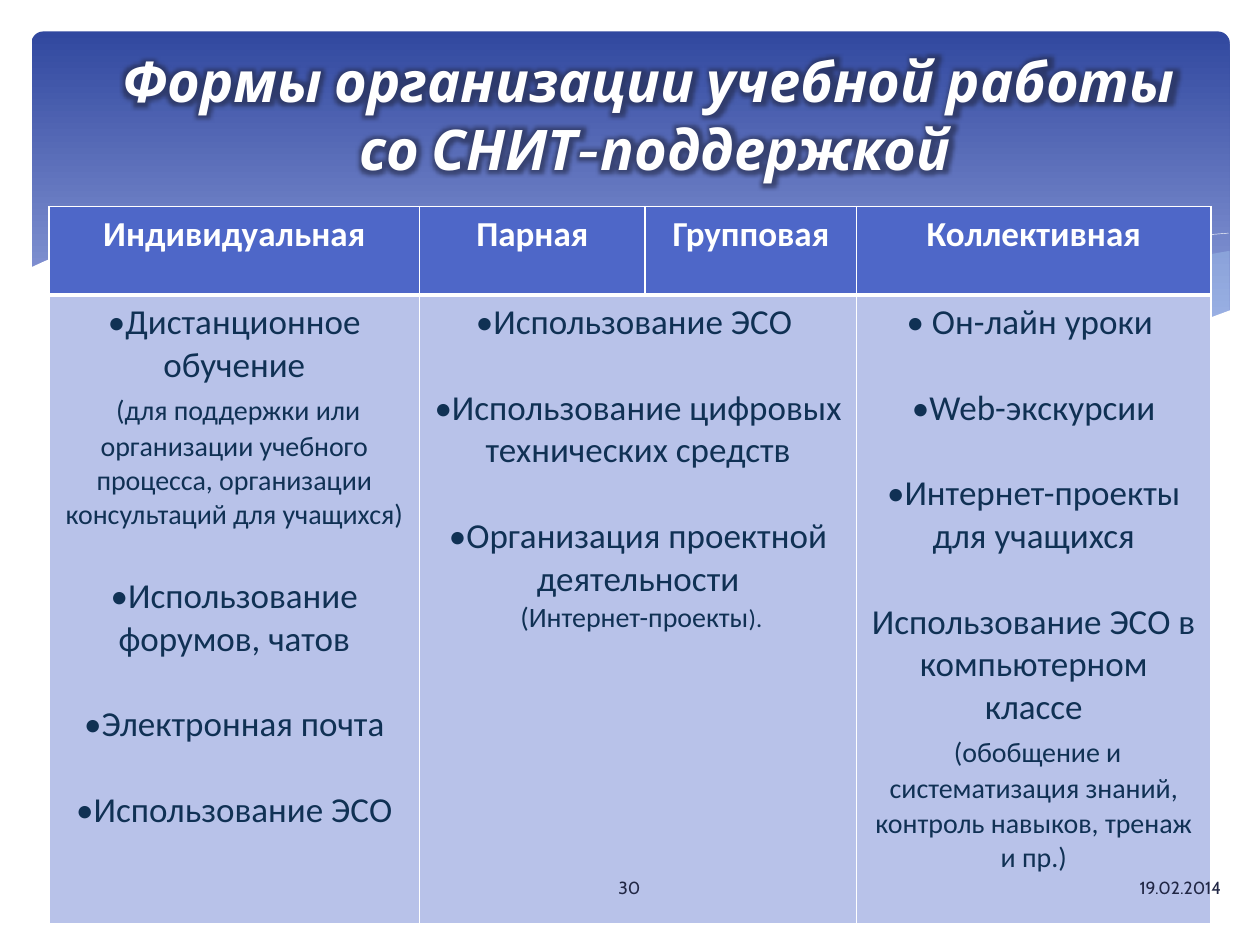
from dataclasses import dataclass
from typing import NamedTuple

from lxml.etree import SubElement
from pptx import Presentation
from pptx.dml.color import RGBColor as RGB
from pptx.enum.shapes import MSO_SHAPE as SHAPE
from pptx.enum.text import MSO_ANCHOR as ANCHOR, MSO_AUTO_SIZE as AUTO, PP_ALIGN as ALIGN
from pptx.oxml import parse_xml
from pptx.oxml.ns import nsdecls, qn
from pptx.util import Inches, Pt


@dataclass(frozen=True)
class Theme:
    white: str = "FFFFFF"
    band_top: str = "31489F"
    band_bottom: str = "95A4DE"
    wave: str = "B4DCFA"
    header: str = "4E67C8"
    body: str = "B8C2E9"
    ink: str = "103154"
    footer: str = "212745"
    title_font: str = "Cabin"
    table_font: str = "Calibri"
    title_pt: int = 32
    text_pt: int = 20
    note_pt: int = 16
    small_pt: int = 14
    footer_pt: int = 10
    gap_pt: float = 24.4


class Wave(NamedTuple):
    points: list[tuple[float, float]]
    fill: str | None = None
    alpha: int = 100


class Para(NamedTuple):
    runs: list[tuple[str, int]]
    bullet: bool = False
    gap: bool = False


class Footer(NamedTuple):
    text: str
    left: float
    width: float
    align: ALIGN


T = Theme()


def item(text: str, gap: bool = True, bullet: bool = True) -> Para:
    return Para([(text, T.text_pt)], bullet, gap)


def note(text: str) -> Para:
    return Para([(" ", T.text_pt), (text, T.note_pt)])


WAVES = [
    Wave([(9.76, 1.99), (9.48, 2.04), (9.06, 2.13), (8.61, 2.23), (8.05, 2.37), (7.53, 2.48),
          (7.06, 2.57), (6.61, 2.65), (7.05, 2.71), (7.57, 2.76), (8.03, 2.78), (8.54, 2.76),
          (8.97, 2.7), (9.35, 2.61), (9.76, 2.47)], T.wave, 29),
    Wave([(8.93, 2.73), (8.37, 2.65), (7.75, 2.54), (7.06, 2.4), (6.29, 2.22), (5.69, 2.08),
          (5.14, 1.98), (4.65, 1.91), (4.2, 1.87), (3.61, 1.86), (3.13, 1.88), (2.86, 1.91),
          (3.42, 1.99), (4.04, 2.11), (4.91, 2.32), (5.66, 2.48), (6.34, 2.61), (6.95, 2.7),
          (7.48, 2.76), (8.07, 2.78), (8.57, 2.77)], T.wave, 40),
    Wave([(3.09, 1.95), (3.44, 1.9), (4.01, 1.87), (4.69, 1.89), (5.33, 1.94), (6.08, 2.04),
          (6.95, 2.19), (7.95, 2.41), (9.07, 2.72)]),
    Wave([(6.13, 2.57), (6.72, 2.41), (7.48, 2.23), (8.36, 2.04), (8.95, 1.94), (9.38, 1.88),
          (9.75, 1.85)]),
    Wave([(9.77, 2.46), (9.5, 2.56), (9.2, 2.65), (8.87, 2.71), (8.5, 2.75), (8.09, 2.77),
          (7.61, 2.75), (7.08, 2.7), (6.47, 2.62), (5.79, 2.5), (5.03, 2.33), (4.47, 2.2),
          (3.91, 2.07), (3.39, 1.97), (2.92, 1.91), (2.5, 1.86), (1.93, 1.84), (1.46, 1.85),
          (1.06, 1.89), (0.75, 1.95), (0.52, 2.01), (0.36, 2.07), (0.23, 2.13), (0.23, 3.29),
          (9.77, 3.29)], T.white),
]
HEADERS = ["Индивидуальная", "Парная", "Групповая", "Коллективная"]
COL_WIDTHS = [2.94, 1.79, 1.68, 2.81]
ROW_HEIGHTS = [0.7, 4.99]
# Column index -> cell text; column 1 spans the pair and group columns
BODY = {
    0: [item("Дистанционное обучение", gap=False),
        note("(для поддержки или организации учебного процесса, "
             "организации консультаций для учащихся)"),
        item("Использование форумов, чатов"),
        item("Электронная почта"),
        item("Использование ЭСО")],
    1: [item("Использование ЭСО ", gap=False),
        item("Использование цифровых технических средств"),
        item("Организация проектной деятельности"),
        Para([(" (Интернет-проекты", T.note_pt), (").", T.small_pt)])],
    3: [item(" Он-лайн уроки ", gap=False),
        item("Web-экскурсии"),
        item("Интернет-проекты для учащихся"),
        item("Использование ЭСО в компьютерном классе", bullet=False),
        note("(обобщение и систематизация знаний, контроль навыков, тренаж и пр.)")],
}
FOOTERS = [Footer("19.02.2014", 5.65, 4.14, ALIGN.RIGHT),
           Footer("30", 4.36, 1.27, ALIGN.CENTER)]


def style(r, font: str, size: int, color: str, bold: bool = False) -> None:
    r.font.name, r.font.size, r.font.bold = font, Pt(size), bold
    r.font.color.rgb = RGB.from_string(color)


def draw_band(slide) -> None:
    sp = slide.shapes.add_shape(SHAPE.ROUNDED_RECTANGLE, Inches(0.25), Inches(0.25),
                                Inches(9.51), Inches(2.7))
    sp.adjustments[0] = 0.034
    sp.shadow.inherit = False
    sp.line.fill.background()
    sp.fill.gradient()
    sp.fill.gradient_angle = 270
    for stop, color, pos in zip(sp.fill.gradient_stops, (T.band_top, T.band_bottom), (0, 0.9)):
        stop.color.rgb, stop.position = RGB.from_string(color), pos


def draw_wave(slide, wave: Wave) -> None:
    # Freeform points are whole numbers, so they are given in hundredths of an inch
    start, *rest = [(round(x * 100), round(y * 100)) for x, y in wave.points]
    fb = slide.shapes.build_freeform(*start, scale=Inches(0.01))
    fb.add_line_segments(rest, close=wave.fill is not None)
    sp = fb.convert_to_shape()
    sp.shadow.inherit = False
    if wave.fill is None:
        sp.fill.background()
        sp.line.color.rgb, sp.line.width = RGB.from_string(T.white), Pt(0.25)
        return
    sp.line.fill.background()
    sp.fill.solid()
    sp.fill.fore_color.rgb = RGB.from_string(wave.fill)
    if wave.alpha < 100:
        clr = sp.fill._xPr.find(".//" + qn("a:srgbClr"))
        SubElement(clr, qn("a:alpha")).set("val", str(wave.alpha * 1000))


def write_title(slide) -> None:
    sp = slide.shapes.title
    slide.shapes._spTree.append(sp._element)  # in front of the background
    sp.left, sp.top, sp.width, sp.height = map(Inches, (0.5, 0.28, 9.34, 1.25))
    tf = sp.text_frame
    tf.text = "Формы организации учебной работы \vсо СНИТ-поддержкой"
    tf.auto_size, tf.vertical_anchor = AUTO.NONE, ANCHOR.MIDDLE
    p = tf.paragraphs[0]
    p.alignment = ALIGN.CENTER
    p._p.get_or_add_pPr().set("marL", str(Inches(0.06)))
    for r in p.runs:
        style(r, T.title_font, T.title_pt, T.white, bold=True)
        r.font.italic = True
        # Soft dark halo behind the letters
        r.font.fill._xPr.find(qn("a:solidFill")).addnext(parse_xml(
            f'<a:effectLst {nsdecls("a")}><a:glow rad="{Pt(11)}"><a:srgbClr val="{T.footer}">'
            '<a:alpha val="60000"/></a:srgbClr></a:glow></a:effectLst>'))


def format_cell(cell, fill: str, top: int, bottom: int) -> None:
    cell.fill.solid()
    cell.fill.fore_color.rgb = RGB.from_string(fill)
    for i, (side, width) in enumerate(zip("LRTB", (1, 1, top, bottom))):
        cell._tc.get_or_add_tcPr().insert(i, parse_xml(
            f'<a:ln{side} {nsdecls("a")} w="{Pt(width)}"><a:solidFill>'
            f'<a:srgbClr val="{T.white}"/></a:solidFill></a:ln{side}>'))


def write_cell(cell, paras: list[Para], color: str, bold: bool = False) -> None:
    tf = cell.text_frame
    for i, para in enumerate(paras):
        p = tf.add_paragraph() if i else tf.paragraphs[0]
        p.alignment = ALIGN.CENTER
        if para.gap:
            p.space_before = Pt(T.gap_pt)
        if para.bullet:
            pPr = p._p.get_or_add_pPr()
            pPr.set("marL", "0")
            pPr.set("indent", "0")
            SubElement(pPr, qn("a:buFont")).set("typeface", T.table_font)
            SubElement(pPr, qn("a:buChar")).set("char", "•")
        for text, size in para.runs:
            r = p.add_run()
            r.text = text
            style(r, T.table_font, size, color, bold)


def draw_table(slide) -> None:
    table = slide.shapes.add_table(2, 4, Inches(0.39), Inches(1.64), Inches(sum(COL_WIDTHS)),
                                   Inches(sum(ROW_HEIGHTS))).table
    for col, width in zip(table.columns, COL_WIDTHS):
        col.width = Inches(width)
    for row, height in zip(table.rows, ROW_HEIGHTS):
        row.height = Inches(height)
    for c, header in enumerate(HEADERS):
        format_cell(table.cell(0, c), T.header, 1, 3)
        format_cell(table.cell(1, c), T.body, 3, 1)
        write_cell(table.cell(0, c), [item(header, gap=False, bullet=False)], T.white, bold=True)
    table.cell(1, 1).merge(table.cell(1, 2))
    for c, paras in BODY.items():
        write_cell(table.cell(1, c), paras, T.ink)


def write_footer(slide, footer: Footer) -> None:
    sp = slide.shapes.add_textbox(Inches(footer.left), Inches(6.84), Inches(footer.width), Inches(0.4))
    tf = sp.text_frame
    tf.word_wrap, tf.vertical_anchor = True, ANCHOR.MIDDLE
    tf.text = footer.text
    p = tf.paragraphs[0]
    p.alignment = footer.align
    style(p.runs[0], T.title_font, T.footer_pt, T.footer)


def main() -> None:
    prs = Presentation()
    prs.slide_width, prs.slide_height = Inches(10), Inches(7.5)
    slide = prs.slides.add_slide(prs.slide_layouts[5])
    # Background
    draw_band(slide)
    for wave in WAVES:
        draw_wave(slide, wave)
    # Content
    write_title(slide)
    draw_table(slide)
    for footer in FOOTERS:
        write_footer(slide, footer)
    prs.save("out.pptx")


if __name__ == "__main__":
    main()
